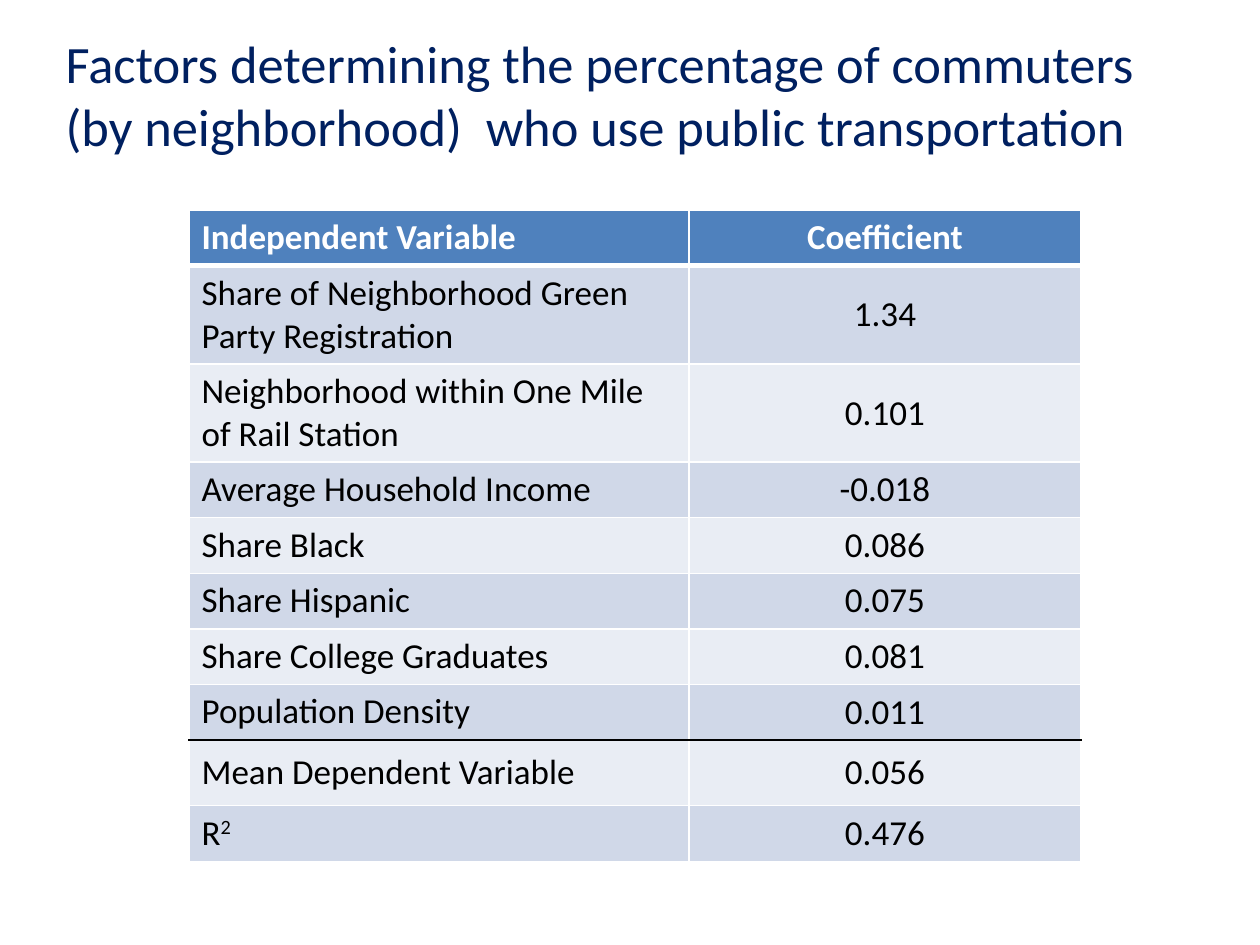
"""Build the slide with the regression table on public transportation use."""
from dataclasses import dataclass

from lxml.etree import SubElement
from pptx import Presentation
from pptx.dml.color import RGBColor
from pptx.enum.text import MSO_ANCHOR, PP_ALIGN
from pptx.oxml.ns import qn
from pptx.util import Emu, Pt

EMU_PER_PX = 914400 / 126


@dataclass(frozen=True)
class Theme:
    font: str = "Calibri"
    title_size: int = 30
    table_size: int = 20
    title: str = "002060"
    header: str = "4F81BD"
    header_text: str = "FFFFFF"
    text: str = "000000"
    bands: tuple[str, str] = ("D0D8E8", "E9EDF4")
    grid: str = "FFFFFF"
    rule: str = "000000"


@dataclass(frozen=True)
class Line:
    color: str
    width: int = 1


@dataclass(frozen=True)
class Row:
    label: str
    value: str
    height: int = 53
    superscript: str = ""
    label_anchor: MSO_ANCHOR = MSO_ANCHOR.TOP
    value_anchor: MSO_ANCHOR = MSO_ANCHOR.MIDDLE


THEME = Theme()
TITLE = (
    "Factors determining the percentage of commuters "
    "(by neighborhood)  who use public transportation"
)
COLUMN_WIDTHS = (500, 392)
ROWS = (
    Row("Independent Variable", "Coefficient", value_anchor=MSO_ANCHOR.TOP),
    Row("Share of Neighborhood Green Party Registration", "1.34", 87),
    Row("Neighborhood within One Mile of Rail Station", "0.101", 94),
    Row("Average Household Income", "-0.018"),
    Row("Share Black", "0.086"),
    Row("Share Hispanic", "0.075"),
    Row("Share College Graduates", "0.081"),
    Row("Population Density", "0.011"),
    Row("Mean Dependent Variable", "0.056", 66, label_anchor=MSO_ANCHOR.MIDDLE),
    Row("R", "0.476", superscript="2"),
)
SUMMARY_START = 8


def px(length: int) -> Emu:
    """Turn a length in px into EMU."""
    return Emu(round(length * EMU_PER_PX))


def add_text(paragraph, text: str, *, size: int, color: str, bold: bool = False,
             align: PP_ALIGN = PP_ALIGN.LEFT, superscript: bool = False) -> None:
    """Append one formatted run to a paragraph."""
    paragraph.alignment = align
    run = paragraph.add_run()
    run.text = text
    run.font.name = THEME.font
    run.font.size = Pt(size)
    run.font.bold = bold
    run.font.color.rgb = RGBColor.from_string(color)
    if superscript:
        run.font._element.set("baseline", "30000")


def add_title(slide) -> None:
    """Place and fill the title placeholder."""
    title = slide.shapes.title
    title.left, title.top, title.width, title.height = map(px, (53, 21, 1134, 147))
    title.text_frame.word_wrap = True
    title.text_frame.vertical_anchor = MSO_ANCHOR.MIDDLE
    add_text(title.text_frame.paragraphs[0], TITLE,
             size=THEME.title_size, color=THEME.title)


def set_borders(cell, top: Line, bottom: Line) -> None:
    """Draw the four borders of a cell, with grid lines at its sides."""
    properties = cell._tc.get_or_add_tcPr()
    side = Line(THEME.grid)
    edges = {"L": side, "R": side, "T": top, "B": bottom}
    for position, (edge, line) in enumerate(edges.items()):
        border = SubElement(properties, qn(f"a:ln{edge}"), w=str(Pt(line.width)))
        fill = SubElement(border, qn("a:solidFill"))
        SubElement(fill, qn("a:srgbClr"), val=line.color)
        properties.insert(position, border)


def line_above(row_index: int) -> Line:
    """Give the horizontal line above a row."""
    if row_index == 1:
        return Line(THEME.grid, 3)
    return Line(THEME.rule if row_index == SUMMARY_START else THEME.grid)


def fill_row(table, index: int, row: Row) -> None:
    """Write and format the cells of one table row."""
    header = index == 0
    fill = THEME.header if header else THEME.bands[(index - 1) % 2]
    text_format = {
        "size": THEME.table_size,
        "color": THEME.header_text if header else THEME.text,
        "bold": header,
    }
    table.rows[index].height = px(row.height)
    label, value = table.cell(index, 0), table.cell(index, 1)
    for cell, anchor in ((label, row.label_anchor), (value, row.value_anchor)):
        cell.vertical_anchor = anchor
        cell.fill.solid()
        cell.fill.fore_color.rgb = RGBColor.from_string(fill)
        set_borders(cell, line_above(index), line_above(index + 1))
    label_paragraph = label.text_frame.paragraphs[0]
    add_text(label_paragraph, row.label, **text_format)
    if row.superscript:
        add_text(label_paragraph, row.superscript, superscript=True, **text_format)
    add_text(value.text_frame.paragraphs[0], row.value,
             align=PP_ALIGN.CENTER, **text_format)


def add_coefficient_table(slide) -> None:
    """Add the table of regression coefficients."""
    height = sum(row.height for row in ROWS)
    frame = slide.shapes.add_table(len(ROWS), len(COLUMN_WIDTHS), px(189), px(210),
                                   px(sum(COLUMN_WIDTHS)), px(height))
    table = frame.table
    for column, width in zip(table.columns, COLUMN_WIDTHS):
        column.width = px(width)
    for index, row in enumerate(ROWS):
        fill_row(table, index, row)


def main() -> None:
    """Build and save the presentation."""
    presentation = Presentation()
    presentation.slide_width, presentation.slide_height = px(1260), px(945)
    slide = presentation.slides.add_slide(presentation.slide_layouts[5])
    add_title(slide)
    add_coefficient_table(slide)
    presentation.save("out.pptx")


if __name__ == "__main__":
    main()
